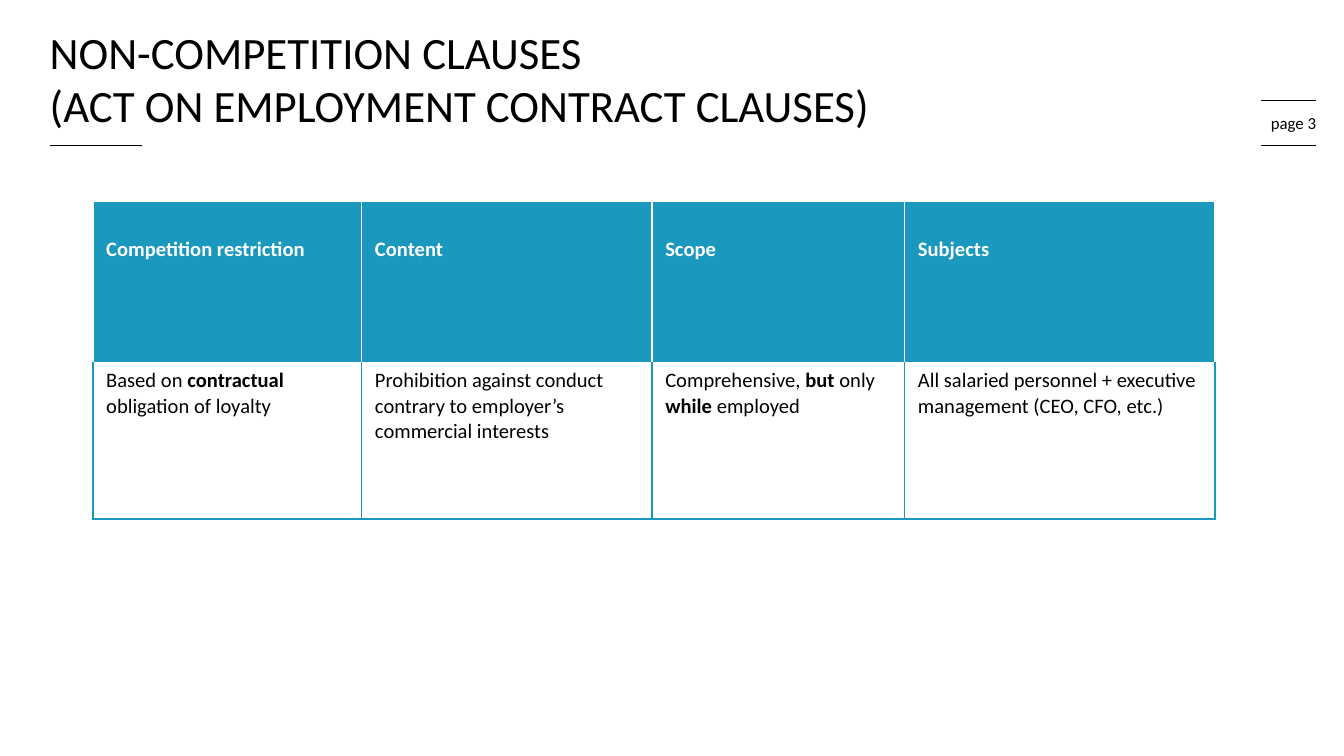
from dataclasses import dataclass

from lxml import etree
from pptx import Presentation
from pptx.dml.color import RGBColor
from pptx.enum.shapes import MSO_CONNECTOR
from pptx.enum.text import MSO_ANCHOR, PP_ALIGN
from pptx.oxml.ns import qn
from pptx.util import Inches, Pt

STRAIGHT = MSO_CONNECTOR.STRAIGHT
TOP, MIDDLE, BOTTOM = MSO_ANCHOR.TOP, MSO_ANCHOR.MIDDLE, MSO_ANCHOR.BOTTOM
LEFT, RIGHT = PP_ALIGN.LEFT, PP_ALIGN.RIGHT


@dataclass(frozen=True)
class Theme:
    font: str = "Calibri"
    ink: str = "000000"
    paper: str = "FFFFFF"
    accent: str = "1A98BD"
    title_size: float = 24
    table_size: float = 11
    page_size: float = 9
    rule_width: float = 0.5
    border_width: float = 1


THEME = Theme()
WIDTH = 10
HEIGHT = WIDTH * 9 / 16
TITLE_LEFT, PAGE_RIGHT = 0.37, 9.79
RULE_TOP, RULE_BOTTOM = 0.75, 1.08
PAD = 0.1

TITLE = ["NON-COMPETITION CLAUSES", "(ACT ON EMPLOYMENT CONTRACT CLAUSES)"]
COLUMNS = [2, 2.16, 1.88, 2.31]
ROWS = [1.2, 1.16]
HEADINGS = ["Competition restriction", "Content", "Scope", "Subjects"]
# Asterisks enclose bold words.
DETAILS = [
    "Based on *contractual *obligation of loyalty",
    "Prohibition against conduct contrary to employer’s commercial interests",
    "Comprehensive, *but *only *while *employed",
    "All salaried personnel + executive management (CEO, CFO, etc.)",
]


def rgb(value):
    return RGBColor.from_string(value)


def write(tf, lines, size, color=THEME.ink, bold=False, align=LEFT, spacing=1.0):
    """Fill a text frame; asterisks in a line switch bold on and off."""
    tf.word_wrap = True
    for i, line in enumerate(lines):
        p = tf.paragraphs[0] if i == 0 else tf.add_paragraph()
        p.alignment = align
        p.line_spacing = spacing
        p.space_before = Pt(0)
        for j, part in enumerate(line.split("*")):
            r = p.add_run()
            r.text = part
            r.font.name = THEME.font
            r.font.size = Pt(size)
            r.font.bold = bold or j % 2 == 1
            r.font.color.rgb = rgb(color)


def set_frame(tf, anchor, bottom=0):
    tf.vertical_anchor = anchor
    tf.margin_left = tf.margin_right = Inches(PAD)
    tf.margin_top, tf.margin_bottom = 0, Inches(bottom)


def add_title(s):
    sp = s.shapes.title
    sp.left, sp.top = Inches(TITLE_LEFT - PAD), Inches(0.57)
    sp.width, sp.height = Inches(8.19), Inches(0.47)
    set_frame(sp.text_frame, BOTTOM, bottom=0.05)
    write(sp.text_frame, TITLE, THEME.title_size, spacing=0.98)


def add_page_label(s):
    width = 1.19
    sp = s.shapes.add_textbox(Inches(PAGE_RIGHT + PAD - width), Inches(0.83),
                              Inches(width), Inches(0.17))
    set_frame(sp.text_frame, MIDDLE)
    write(sp.text_frame, ["page 3"], THEME.page_size, align=RIGHT)


def add_rule(s, left, right, y):
    line = s.shapes.add_connector(STRAIGHT, Inches(right), Inches(y),
                                  Inches(left), Inches(y))
    line.line.color.rgb = rgb(THEME.ink)
    line.line.width = Pt(THEME.rule_width)
    etree.SubElement(line._element.spPr, qn("a:effectLst"))


def set_borders(cell, side_color, top_color, bottom_color):
    tcPr = cell._tc.get_or_add_tcPr()
    colors = {"lnL": side_color, "lnR": side_color,
              "lnT": top_color, "lnB": bottom_color}
    for tag, color in colors.items():
        ln = etree.SubElement(tcPr, qn(f"a:{tag}"), w=str(Pt(THEME.border_width)))
        fill = etree.SubElement(ln, qn("a:solidFill"))
        etree.SubElement(fill, qn("a:srgbClr"), val=color)


def format_cell(cell, text, header):
    cell.margin_left = cell.margin_right = Inches(PAD)
    cell.margin_top = Inches(0.26 if header else 0.04)
    cell.margin_bottom = Inches(0.04)
    cell.vertical_anchor = TOP
    edge = THEME.paper if header else THEME.accent
    set_borders(cell, edge, THEME.paper, edge)
    if header:
        cell.fill.solid()
        cell.fill.fore_color.rgb = rgb(THEME.accent)
    else:
        cell.fill.background()
    write(cell.text_frame, [text], THEME.table_size, bold=header,
          color=THEME.paper if header else THEME.ink)


def add_clause_table(s):
    table = s.shapes.add_table(len(ROWS), len(COLUMNS), Inches(0.69), Inches(1.5),
                               Inches(sum(COLUMNS)), Inches(sum(ROWS))).table
    table.horz_banding = False
    for column, width in zip(table.columns, COLUMNS):
        column.width = Inches(width)
    for row, height, texts in zip(table.rows, ROWS, (HEADINGS, DETAILS)):
        row.height = Inches(height)
        for cell, text in zip(row.cells, texts):
            format_cell(cell, text, header=texts is HEADINGS)


def main():
    prs = Presentation()
    prs.slide_width, prs.slide_height = Inches(WIDTH), Inches(HEIGHT)
    s = prs.slides.add_slide(prs.slide_layouts[5])
    add_page_label(s)
    for y in (RULE_TOP, RULE_BOTTOM):
        add_rule(s, 9.38, PAGE_RIGHT, y)
    add_rule(s, TITLE_LEFT, 1.06, RULE_BOTTOM)
    add_title(s)
    add_clause_table(s)
    prs.save("out.pptx")


if __name__ == "__main__":
    main()
